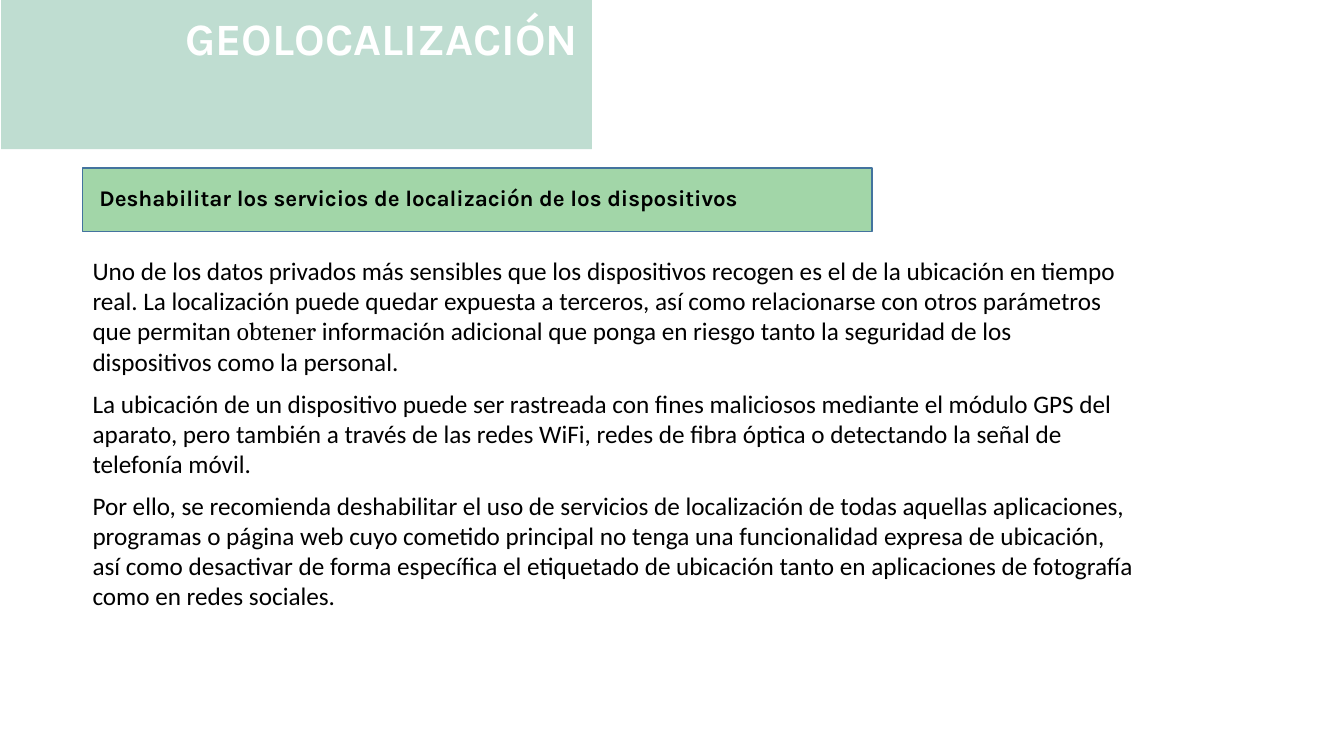
from pptx import Presentation
from pptx.dml.color import RGBColor
from pptx.enum import shapes, text
from pptx.util import Pt

BLACK, WHITE = "000000", "FFFFFF"
MINT, GREEN, BLUE = "BFDDD1", "A2D6A8", "43739E"

SENSITIVE_DATA = [
    ("Uno de los datos privados más sensibles que los dispositivos recogen es el de la "
     "ubicación en tiempo real. La localización puede quedar expuesta a terceros, así como "
     "relacionarse con otros parámetros que permitan ", "Calibri"),
    ("obtener", "Cambria"),
    (" información adicional que ponga en riesgo tanto la seguridad de los dispositivos "
     "como la personal.", "Calibri"),
]
TRACKING = [
    ("La ubicación de un dispositivo puede ser rastreada con fines maliciosos mediante el "
     "módulo GPS del aparato, pero también a través de las redes WiFi, redes de fibra óptica "
     "o detectando la señal de telefonía móvil.", "Calibri"),
]
ADVICE = [
    ("Por ello, se recomienda deshabilitar el uso de servicios de localización de todas "
     "aquellas aplicaciones, programas o página web cuyo cometido principal no tenga una "
     "funcionalidad expresa de ubicación, así como desactivar de forma específica el "
     "etiquetado de ubicación tanto en aplicaciones de fotografía como en redes sociales.",
     "Calibri"),
]


def color(value):
    return RGBColor.from_string(value)


def add_panel(slide, box, fill, line=None):
    shape = slide.shapes.add_shape(shapes.MSO_SHAPE.RECTANGLE, *map(Pt, box))
    shape.shadow.inherit = False
    shape.fill.solid()
    shape.fill.fore_color.rgb = color(fill)
    if line:
        shape.line.color.rgb = color(line)
        shape.line.width = Pt(1)
    else:
        shape.line.fill.background()


def add_text(slide, box, runs, size, ink=BLACK, bold=False, align="LEFT", inset=None):
    frame = slide.shapes.add_textbox(*map(Pt, box)).text_frame
    frame.word_wrap = True
    if inset is not None:
        for side in ("left", "top", "right", "bottom"):
            setattr(frame, f"margin_{side}", Pt(inset))
    paragraph = frame.paragraphs[0]
    paragraph.alignment = text.PP_ALIGN[align]
    for words, font_name in runs:
        run = paragraph.add_run()
        run.text = words
        run.font.color.rgb = color(ink)
        for name, value in {"name": font_name, "size": Pt(size), "bold": bold}.items():
            setattr(run.font, name, value)


def add_title_band(slide, left, top, width, height):
    add_panel(slide, (left, top, width, height), MINT)
    add_text(slide, (left, top - 1.5, width, height - 12), [("GEOLOCALIZACIÓN", "Karla")],
             32, WHITE, bold=True, align="RIGHT", inset=9.5)


def add_heading(slide, left, top, width, height):
    add_panel(slide, (left, top, width, height), GREEN, BLUE)
    heading = "Deshabilitar los servicios de localización de los dispositivos"
    add_text(slide, (left + 5, top + 8, width - 7, height - 18), [(heading, "Karla")],
             16, bold=True)


def add_body(slide, left, top, width):
    # Each block starts where the one above it ends
    for runs, height in ((SENSITIVE_DATA, 94.75), (TRACKING, 73), (ADVICE, 94.75)):
        add_text(slide, (left, top, width, height), runs, 18)
        top += height


def main():
    presentation = Presentation()
    presentation.slide_width, presentation.slide_height = Pt(960), Pt(540)
    slide = presentation.slides.add_slide(presentation.slide_layouts[6])
    add_title_band(slide, 0.75, 0, 422, 106.5)
    add_heading(slide, 59, 120, 564, 45.5)
    add_body(slide, 59, 178.75, 759.5)
    presentation.save("out.pptx")


if __name__ == "__main__":
    main()
